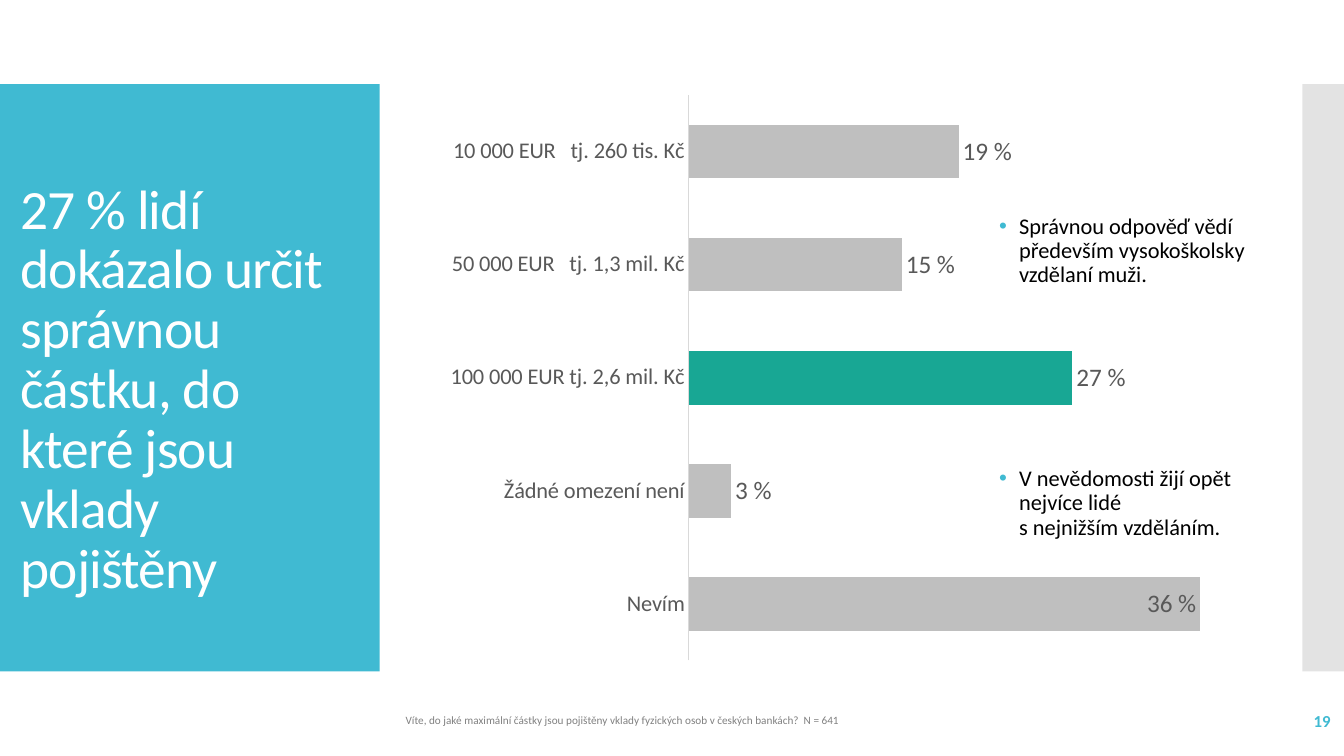
from lxml.etree import SubElement
from pptx import Presentation
from pptx.chart.data import CategoryChartData
from pptx.dml.color import RGBColor
from pptx.enum.chart import XL_CHART_TYPE, XL_LABEL_POSITION, XL_TICK_LABEL_POSITION, XL_TICK_MARK
from pptx.enum.shapes import MSO_SHAPE
from pptx.enum.text import MSO_ANCHOR, PP_ALIGN
from pptx.oxml import parse_xml
from pptx.oxml.ns import nsdecls, qn
from pptx.util import Emu, Inches, Pt

FONT = "Calibri"
WHITE = RGBColor(0xFF, 0xFF, 0xFF)
BLACK = RGBColor(0, 0, 0)
BLUE = RGBColor(0x40, 0xBA, 0xD2)
GREEN = RGBColor(0x18, 0xA7, 0x94)
SILVER = RGBColor(0xBF, 0xBF, 0xBF)
PALE = RGBColor(0xC8, 0xC8, 0xC8)
RULE = RGBColor(0xD9, 0xD9, 0xD9)
DARK = RGBColor(0x59, 0x59, 0x59)
GRAY = RGBColor(0x80, 0x80, 0x80)

# Grid of 32 columns and 36 rows
WIDE, HIGH = Emu(12192000), Inches(7.5)
COL, ROW = WIDE / 32, HIGH / 36

TITLE = "27 % lidí dokázalo určit správnou částku, do které jsou vklady pojištěny"
ASK = "Víte, do jaké maximální částky jsou pojištěny vklady fyzických osob v českých bankách?  N = 641"
NOTES = [
    ["Správnou odpověď vědí především vysokoškolsky vzdělaní muži."],
    ["V nevědomosti žijí opět nejvíce lidé ", "s nejnižším vzděláním."],
]
SHARES = {
    "10 000 EUR   tj. 260 tis. Kč": 0.19,
    "50 000 EUR   tj. 1,3 mil. Kč": 0.15,
    "100 000 EUR tj. 2,6 mil. Kč": 0.27,
    "Žádné omezení není": 0.03,
    "Nevím": 0.36,
}
RIGHT = 2  # index of the correct answer


def grid(x, y, w, h):
    return [Emu(round(n)) for n in (x * COL, y * ROW, w * COL, h * ROW)]


def style(font, size, color, bold=False):
    font.name, font.size, font.bold = FONT, Pt(size), bold
    font.color.rgb = color


def add_run(para, text, size, color, bold=False):
    run = para.add_run()
    run.text = text
    style(run.font, size, color, bold)
    return run


def add_box(slide, box, anchor=MSO_ANCHOR.MIDDLE):
    frame = slide.shapes.add_textbox(*box).text_frame
    frame.word_wrap = True
    frame.vertical_anchor = anchor
    return frame


def add_band(slide, box, color, alpha=None):
    band = slide.shapes.add_shape(MSO_SHAPE.RECTANGLE, *box)
    band.shadow.inherit = False
    band.line.fill.background()
    band.fill.solid()
    band.fill.fore_color.rgb = color
    if alpha:
        tint = band.fill._xPr.find(".//" + qn("a:srgbClr"))
        SubElement(tint, qn("a:alpha"), val=str(alpha * 1000))


def add_title(slide, box):
    para = add_box(slide, box).paragraphs[0]
    para.line_spacing = 0.9
    run = add_run(para, TITLE, 39.6, WHITE)
    run.font._element.set("spc", "-60")


def add_foot(slide, ask_box, num_box):
    para = add_box(slide, ask_box).paragraphs[0]
    para.line_spacing = 0.9
    add_run(para, ASK, 8, GRAY)
    para = add_box(slide, num_box).paragraphs[0]
    para.alignment = PP_ALIGN.RIGHT
    add_run(para, "19", 12, BLUE, True)


def add_notes(slide, box):
    frame = add_box(slide, box, MSO_ANCHOR.TOP)
    for i, lines in enumerate(NOTES):
        para = frame.add_paragraph() if i else frame.paragraphs[0]
        para.line_spacing = 0.9
        if i:
            para.space_before = Pt(128.5)
        props = para._p.get_or_add_pPr()
        props.set("marL", str(Inches(0.2)))
        props.set("indent", str(-Inches(0.2)))
        tint = SubElement(props, qn("a:buClr"))
        SubElement(tint, qn("a:srgbClr"), val=str(BLUE))
        SubElement(props, qn("a:buFont"), typeface="Arial")
        SubElement(props, qn("a:buChar"), char="•")
        for j, line in enumerate(lines):
            if j:
                para.add_line_break()
            add_run(para, line, 16, BLACK)


def add_bars(slide, box):
    data = CategoryChartData(number_format="0%")
    data.categories = list(SHARES)
    data.add_series("Series 1", list(SHARES.values()))
    chart = slide.shapes.add_chart(XL_CHART_TYPE.BAR_CLUSTERED, *box, data).chart
    chart.has_legend = chart.has_title = False
    style(chart.font, 8, BLACK)

    # Axes
    axis = chart.category_axis
    axis.reverse_order = True
    axis.major_tick_mark = axis.minor_tick_mark = XL_TICK_MARK.NONE
    axis.tick_label_position = XL_TICK_LABEL_POSITION.NEXT_TO_AXIS
    axis.format.line.color.rgb = RULE
    axis.format.line.width = Pt(0.75)
    style(axis.tick_labels.font, 16, DARK)
    scale = chart.value_axis
    scale.minimum_scale, scale.maximum_scale = 0, 0.4
    scale.has_major_gridlines = False
    scale.major_tick_mark = scale.minor_tick_mark = XL_TICK_MARK.NONE
    scale.tick_labels.number_format = "0%"
    scale.tick_labels.number_format_is_linked = False
    scale.visible = False

    # Bars and their labels; the longest bar holds its label inside
    plot = chart.plots[0]
    plot.gap_width = 110
    plot.vary_by_categories = False
    bars = plot.series[0]
    bars.format.fill.solid()
    bars.format.fill.fore_color.rgb = SILVER
    labels = bars.data_labels
    labels.show_value = True
    labels.number_format = "0%"
    labels.number_format_is_linked = False
    style(labels.font, 18, DARK)
    top = max(SHARES.values())
    for i, share in enumerate(SHARES.values()):
        point = bars.points[i]
        point.format.fill.solid()
        point.format.fill.fore_color.rgb = GREEN if i == RIGHT else SILVER
        label = point.data_label
        add_run(label.text_frame.paragraphs[0], f"{share * 100:.0f} %", 18, DARK)
        label.position = (XL_LABEL_POSITION.INSIDE_END if share == top
                          else XL_LABEL_POSITION.OUTSIDE_END)

    # Place of the inner plot area
    area = chart._chartSpace.chart.plotArea
    for old in area.findall(qn("c:layout")):
        area.remove(old)
    layout = parse_xml(f"<c:layout {nsdecls('c')}><c:manualLayout/></c:layout>")
    parts = {"layoutTarget": "inner", "xMode": "edge", "yMode": "edge",
             "x": "0.337", "y": "0.023", "w": "0.654", "h": "0.948"}
    for name, val in parts.items():
        SubElement(layout[0], qn("c:" + name), val=val)
    area.insert(0, layout)


def main():
    deck = Presentation()
    deck.slide_width, deck.slide_height = WIDE, HIGH
    slide = deck.slides.add_slide(deck.slide_layouts[6])
    add_band(slide, grid(0, 4, 9.04, 27.97), BLUE)
    add_band(slide, grid(31.01, 4, 0.99, 27.97), PALE, 50)
    add_title(slide, grid(0.25, 6.53, 8.2, 24.15))
    add_bars(slide, grid(9.42, 3.87, 20.7, 28.4))
    add_notes(slide, grid(23.55, 10, 7.56, 16.3))
    add_foot(slide, grid(9.42, 33.5, 21.65, 1.63), grid(27.92, 33.36, 4, 1.92))
    deck.save("out.pptx")


if __name__ == "__main__":
    main()
